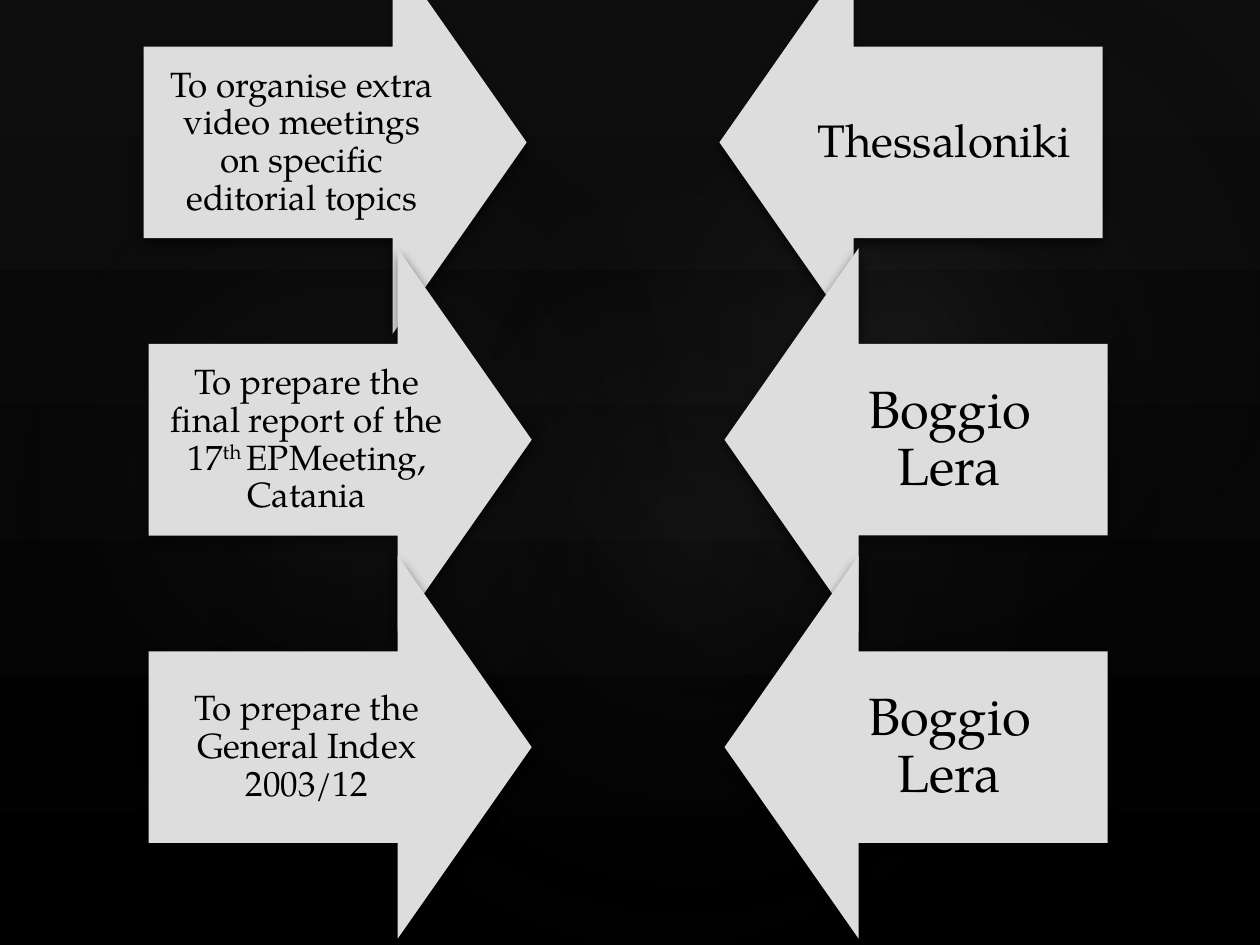
import lxml.etree
import pptx
import pptx.dml.color
import pptx.enum.shapes
import pptx.enum.text
import pptx.oxml
import pptx.oxml.ns
import pptx.util

RGB = pptx.dml.color.RGBColor
SHAPE = pptx.enum.shapes.MSO_SHAPE
BLACK = RGB(0x00, 0x00, 0x00)
DARK = RGB(0x0E, 0x0E, 0x0E)
GREY = RGB(0xDD, 0xDD, 0xDD)
HAZE = RGB(0x94, 0x94, 0x94)
COLS, ROWS = 100, 75
SIDE = 30.4
BODY = (25.1, 15.2)
NS = pptx.oxml.ns.nsdecls("a")


class Deck:
    font = "TeX Gyre Pagella"

    def __init__(self):
        self.prs = pptx.Presentation()
        self.prs.slide_width = pptx.util.Inches(10)
        self.prs.slide_height = pptx.util.Inches(7.5)
        self.slide = self.prs.slides.add_slide(self.prs.slide_layouts[6])

    def grid(self, x, y, w, h):
        col = self.prs.slide_width / COLS
        row = self.prs.slide_height / ROWS
        return [round(n) for n in (x * col, y * row, w * col, h * row)]

    def shade(self):
        fill = self.slide.background.fill
        fill.gradient()
        fill.gradient_angle = 270
        for stop, tint in zip(fill.gradient_stops, (DARK, BLACK)):
            stop.color.rgb = tint

    def shape(self, kind, box, turn):
        item = self.slide.shapes.add_shape(kind, *self.grid(*box))
        item.rotation = turn
        item.shadow.inherit = False
        item.line.fill.background()
        return item

    def glow(self, box, turn, alpha):
        item = self.shape(SHAPE.OVAL, box, turn)
        item.fill.background()
        grad = pptx.oxml.parse_xml(
            f'<a:gradFill {NS} rotWithShape="1"><a:gsLst>'
            f'<a:gs pos="0"><a:srgbClr val="{HAZE}"><a:alpha val="{alpha * 1000}"/></a:srgbClr></a:gs>'
            f'<a:gs pos="58000"><a:srgbClr val="{BLACK}"><a:alpha val="0"/></a:srgbClr></a:gs>'
            '</a:gsLst><a:path path="circle">'
            '<a:fillToRect l="50000" t="50000" r="50000" b="50000"/></a:path></a:gradFill>')
        props = item.element.spPr
        props.replace(props.find(pptx.oxml.ns.qn("a:noFill")), grad)

    def arrow(self, x, y, turn):
        item = self.shape(SHAPE.DOWN_ARROW, (x, y, SIDE, SIDE), turn)
        item.adjustments[0], item.adjustments[1] = 0.5, 0.35
        item.fill.solid()
        item.fill.fore_color.rgb = GREY
        cast = pptx.oxml.parse_xml(
            f'<a:outerShdw {NS} blurRad="{pptx.util.Pt(6)}" dist="{pptx.util.Pt(3)}" '
            f'dir="5400000" rotWithShape="0"><a:srgbClr val="{BLACK}">'
            '<a:alpha val="60000"/></a:srgbClr></a:outerShdw>')
        item.element.spPr.find(pptx.oxml.ns.qn("a:effectLst")).append(cast)

    def label(self, x, y, parts, size, inset):
        frame = self.slide.shapes.add_textbox(*self.grid(x, y, *BODY)).text_frame
        frame.word_wrap = True
        frame.vertical_anchor = pptx.enum.text.MSO_ANCHOR.MIDDLE
        frame.margin_left = frame.margin_right = pptx.util.Inches(inset)
        frame.margin_top = frame.margin_bottom = pptx.util.Inches(inset)
        para = frame.paragraphs[0]
        para.alignment = pptx.enum.text.PP_ALIGN.CENTER
        para.line_spacing = 0.9
        for spot, part in enumerate(parts):
            run = para.add_run()
            run.text = part
            run.font.name = self.font
            run.font.size = pptx.util.Pt(size)
            run.font.color.rgb = BLACK
            if spot % 2:
                run.font._element.set("baseline", "30000")

    def pair(self, x, y, task, place, size, inset):
        gap = 45.7
        top = y + (SIDE - BODY[1]) / 2
        self.arrow(x, y, 270)
        self.label(x, top, task, 20, 0.16)
        self.arrow(x + gap, y, 90)
        self.label(x + gap + SIDE - BODY[0], top, [place], size, inset)


def main():
    deck = Deck()
    deck.shade()
    deck.glow((15, 11.4, 79.2, 62.4), 328.7, 7)
    deck.glow((-3, 12.8, 60.6, 49), 294.3, 8)
    deck.glow((35.8, 1.3, 70.9, 52), 328.7, 8)
    rows = [
        (11.4, -3.9, ["To organise extra video meetings on specific editorial topics"],
         "Thessaloniki", 26, 0.2),
        (11.8, 19.7, ["To prepare the final report of the 17", "th ", "EPMeeting, Catania"],
         "Boggio Lera", 30, 0.23),
        (11.8, 44.1, ["To prepare the General Index 2003/12"],
         "Boggio Lera", 30, 0.23),
    ]
    for row in rows:
        deck.pair(*row)
    deck.prs.save("out.pptx")


if __name__ == "__main__":
    main()
